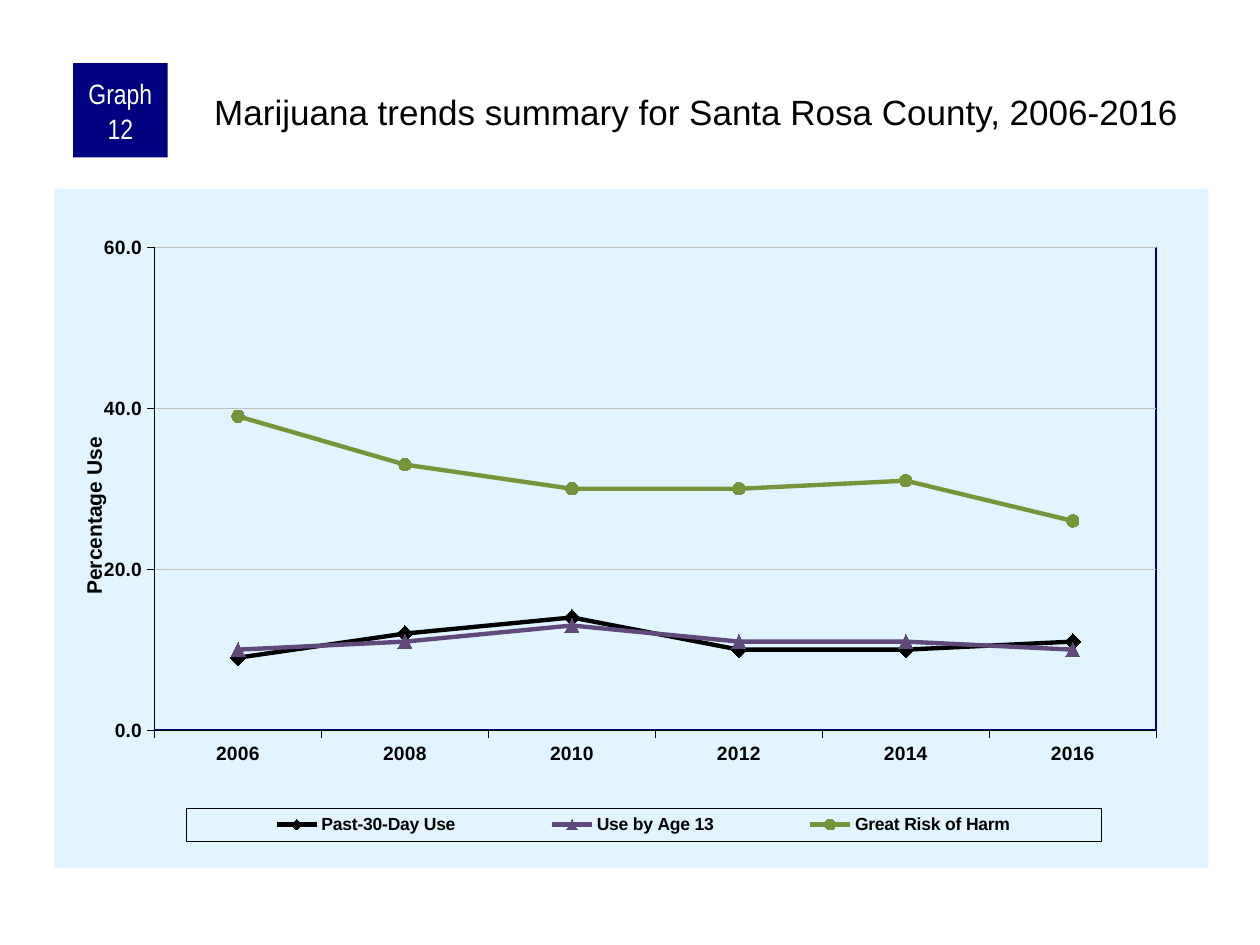
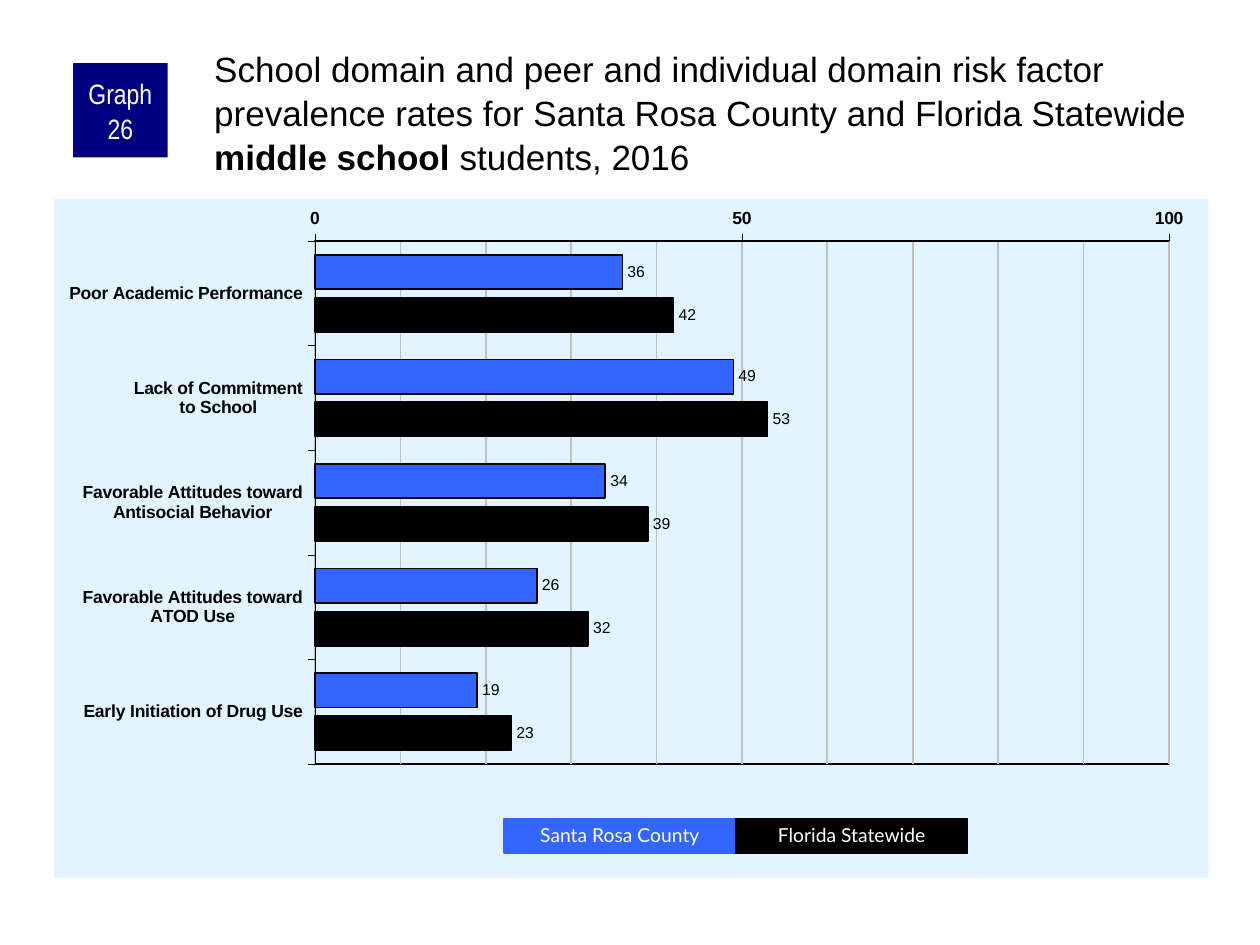
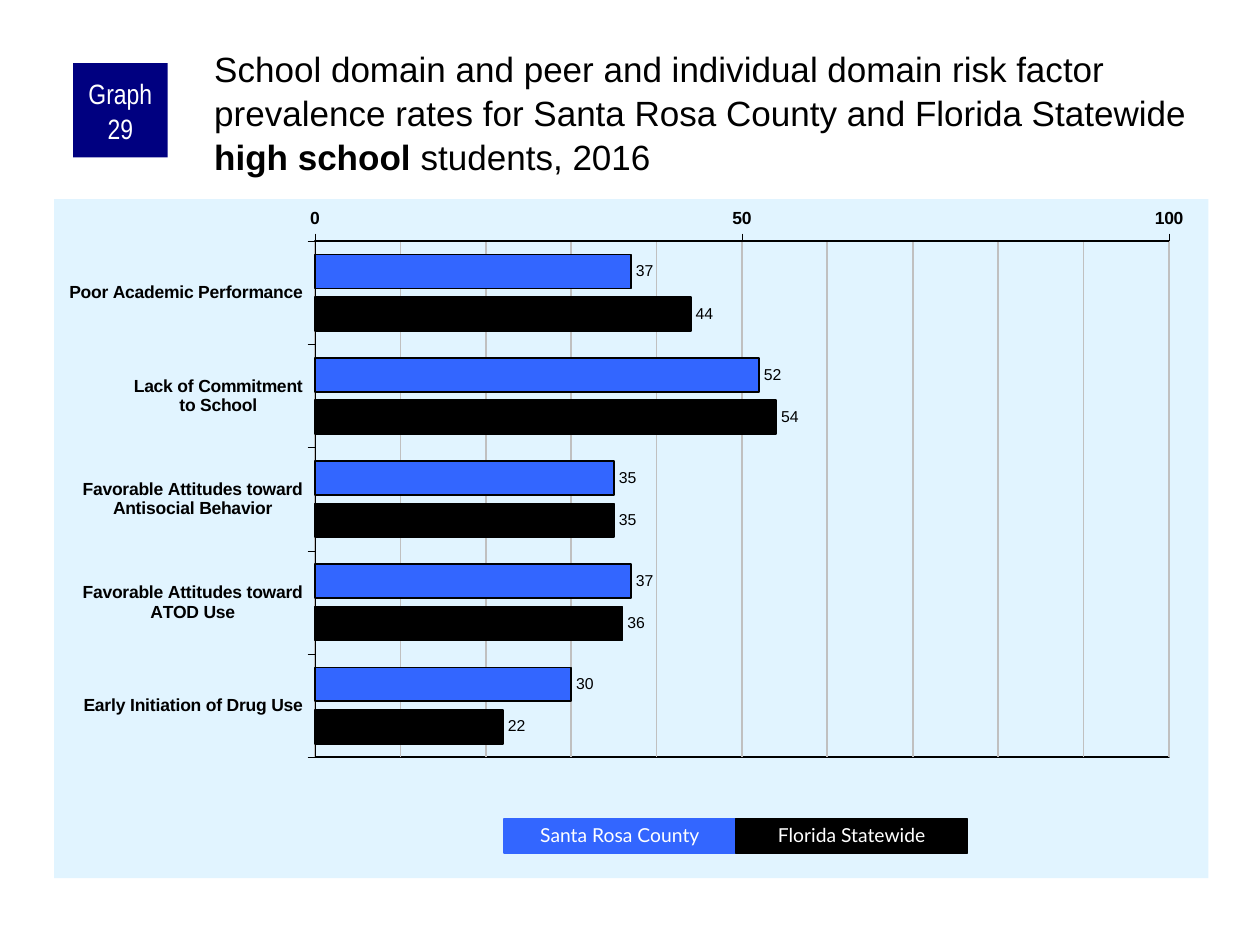
from typing import NamedTuple

from pptx import Presentation
from pptx.chart.data import CategoryChartData
from pptx.dml.color import RGBColor
from pptx.enum.chart import (XL_AXIS_CROSSES, XL_CHART_TYPE, XL_LABEL_POSITION,
                             XL_LEGEND_POSITION, XL_MARKER_STYLE, XL_TICK_MARK)
from pptx.enum.shapes import MSO_SHAPE
from pptx.enum.text import MSO_ANCHOR, MSO_AUTO_SIZE, PP_ALIGN
from pptx.oxml import parse_xml
from pptx.oxml.ns import nsdecls, qn
from pptx.util import Pt

# Scale: 100 px to the inch
PX = 9144

# Colours and fonts
BLACK = RGBColor(0x00, 0x00, 0x00)
WHITE = RGBColor(0xFF, 0xFF, 0xFF)
NAVY = RGBColor(0x00, 0x00, 0x80)
SKY = RGBColor(0xE1, 0xF4, 0xFF)
GREY = RGBColor(0xC0, 0xC0, 0xC0)
BLUE = RGBColor(0x33, 0x66, 0xFF)
PURPLE = RGBColor(0x60, 0x4A, 0x7B)
GREEN = RGBColor(0x77, 0x93, 0x3C)
SANS, NARROW, LATO = "Arial", "Arial Narrow", "Lato"

# Enum members
LINE, BAR = XL_CHART_TYPE.LINE_MARKERS, XL_CHART_TYPE.BAR_CLUSTERED
DIAMOND, TRIANGLE, CIRCLE = (XL_MARKER_STYLE.DIAMOND, XL_MARKER_STYLE.TRIANGLE,
                             XL_MARKER_STYLE.CIRCLE)
OUT, NO_TICK = XL_TICK_MARK.OUTSIDE, XL_TICK_MARK.NONE
FAR_END, BAR_END = XL_AXIS_CROSSES.MAXIMUM, XL_LABEL_POSITION.OUTSIDE_END
RIGHT = XL_LEGEND_POSITION.RIGHT
RECT, FIXED = MSO_SHAPE.RECTANGLE, MSO_AUTO_SIZE.NONE
LEFT, CENTER = PP_ALIGN.LEFT, PP_ALIGN.CENTER
TOP, MIDDLE = MSO_ANCHOR.TOP, MSO_ANCHOR.MIDDLE


class Box(NamedTuple):
    left: int
    top: int
    width: int
    height: int

    def emu(self) -> list[int]:
        return [side * PX for side in self]


class Trend(NamedTuple):
    name: str
    color: RGBColor
    marker: XL_MARKER_STYLE
    size: int
    vals: tuple[int, ...]


class Risk(NamedTuple):
    number: int
    group: str
    county: tuple[int, ...]
    state: tuple[int, ...]
    height: float


# Content
YEARS = ("2006", "2008", "2010", "2012", "2014", "2016")
TRENDS = (
    Trend("Past-30-Day Use", BLACK, DIAMOND, 9, (9, 12, 14, 10, 10, 11)),
    Trend("Use by Age 13", PURPLE, TRIANGLE, 8, (10, 11, 13, 11, 11, 10)),
    Trend("Great Risk of Harm", GREEN, CIRCLE, 7, (39, 33, 30, 30, 31, 26)),
)
FACTORS = ("Poor Academic Performance", "Lack of Commitment\nto School",
           "Favorable Attitudes toward\nAntisocial Behavior",
           "Favorable Attitudes toward\nATOD Use", "Early Initiation of Drug Use")
RISKS = (
    Risk(26, "middle school", (36, 49, 34, 26, 19), (42, 53, 39, 32, 23), 0.77),
    Risk(29, "high school", (37, 52, 35, 37, 30), (44, 54, 35, 36, 22), 0.76),
)
KEYS = (("Santa Rosa County", BLUE), ("Florida Statewide", BLACK))

# Places
BADGE = Box(58, 50, 75, 75)
KEY = Box(400, 650, 184, 27)


def style(font, size: float, name: str = SANS, color: RGBColor = BLACK,
          bold: bool = False) -> None:
    font.size, font.name, font.bold = Pt(size), name, bold
    font.color.rgb = color


def write(shape, *parts: str, size: int, name: str = SANS, color: RGBColor = BLACK,
          align=CENTER, anchor=MIDDLE, inset=(0, 0, 0, 0), gap: float = 1.0) -> None:
    """Write the parts as runs of one paragraph; every second part is bold."""
    frame = shape.text_frame
    frame.word_wrap, frame.auto_size = True, FIXED
    frame.vertical_anchor = anchor
    (frame.margin_left, frame.margin_top,
     frame.margin_right, frame.margin_bottom) = [side * PX for side in inset]
    para = frame.paragraphs[0]
    para.alignment, para.line_spacing = align, gap
    for index, part in enumerate(parts):
        run = para.add_run()
        run.text = part
        style(run.font, size, name, color, bold=index % 2 == 1)


def add_block(slide, box: Box, fill: RGBColor, edge: bool = False):
    block = slide.shapes.add_shape(RECT, *box.emu())
    block.shadow.inherit = False
    block.fill.solid()
    block.fill.fore_color.rgb = fill
    if edge:
        rule(block.line, fill, 0.75)
    else:
        block.line.fill.background()
    return block


def add_page(prs, number: int, top: int, *title: str):
    """Add a slide with its title and numbered badge."""
    slide = prs.slides.add_slide(prs.slide_layouts[5])
    head = slide.shapes.title
    head.left, head.top, head.width, head.height = Box(167, top, 792, 83).emu()
    write(head, *title, size=20, align=LEFT, anchor=TOP, inset=(3, 3, 0, 0), gap=1.05)
    write(add_block(slide, BADGE, NAVY), f"Graph {number}", size=16, name=NARROW,
          color=WHITE, inset=(5, 0, 5, 0), gap=1.05)
    return slide


# Chart parts that need XML
def place(node, index: int, x: float, y: float, w: float = 0, h: float = 0,
          inner: bool = False) -> None:
    for old in node.findall(qn("c:layout")):
        node.remove(old)
    target = '<c:layoutTarget val="inner"/>' if inner else ""
    size = f'<c:w val="{w}"/><c:h val="{h}"/>' if w else ""
    node.insert(index, parse_xml(
        f'<c:layout {nsdecls("c")}><c:manualLayout>{target}'
        f'<c:xMode val="edge"/><c:yMode val="edge"/><c:x val="{x}"/><c:y val="{y}"/>'
        f'{size}</c:manualLayout></c:layout>'))


def paint(fill: RGBColor | None = None, edge: RGBColor | None = None, width: float = 0):
    def solid(color):
        if color is None:
            return "<a:noFill/>"
        return f'<a:solidFill><a:srgbClr val="{color}"/></a:solidFill>'
    return parse_xml(f'<c:spPr {nsdecls("c", "a")}>{solid(fill)}'
                     f'<a:ln w="{Pt(width)}">{solid(edge)}</a:ln></c:spPr>')


def rule(line, color: RGBColor, width: float) -> None:
    line.color.rgb, line.width = color, Pt(width)


def add_graph(slide, kind, top: int, cats, rows, plot, edge: RGBColor, size: float,
              limit: int, step: int, tick: int, form: str, grid: float):
    """Add a chart with its panel, plot area and axes."""
    data = CategoryChartData()
    data.categories = cats
    for name, vals in rows:
        data.add_series(name, vals)
    chart = slide.shapes.add_chart(kind, *Box(43, top, 916, 539).emu(), data).chart
    chart.has_title = chart.has_legend = False
    style(chart.font, size)
    chart.plots[0].vary_by_categories = False
    chart.element.find(qn("c:chart")).addnext(paint(SKY))
    area = chart.element.find(".//" + qn("c:plotArea"))
    place(area, 0, *plot, inner=True)
    area.append(paint(edge=edge, width=1))
    for axis in (chart.category_axis, chart.value_axis):
        axis.major_tick_mark, axis.minor_tick_mark = OUT, NO_TICK
        style(axis.tick_labels.font, tick, bold=True)
        rule(axis.format.line, BLACK, 0.25)
    scale = chart.value_axis
    scale.minimum_scale, scale.maximum_scale, scale.major_unit = 0, limit, step
    scale.has_major_gridlines = True
    rule(scale.major_gridlines.format.line, GREY, grid)
    scale.tick_labels.number_format = form
    scale.tick_labels.number_format_is_linked = False
    return chart


def add_trends(prs) -> None:
    slide = add_page(prs, 12, 67,
                     "Marijuana trends summary for Santa Rosa County, 2006-2016")
    chart = add_graph(slide, LINE, 150, YEARS, [(t.name, t.vals) for t in TRENDS],
                      (0.087, 0.086, 0.868, 0.711), NAVY, 8, 60, 20, 11, "0.0", 0.25)
    for trend, row in zip(TRENDS, chart.plots[0].series):
        row.smooth = False
        rule(row.format.line, trend.color, 2.5)
        mark = row.marker
        mark.style, mark.size = trend.marker, trend.size
        mark.format.fill.solid()
        mark.format.fill.fore_color.rgb = trend.color
        rule(mark.format.line, trend.color, 0.75)
    # Axis title
    run = chart.value_axis.axis_title.text_frame.paragraphs[0].add_run()
    run.text = "Percentage Use"
    style(run.font, 12, bold=True)
    title = chart.element.find(f'.//{qn("c:valAx")}/{qn("c:title")}')
    title.find(".//" + qn("a:bodyPr")).set("rot", "-5400000")
    place(title, 1, 0.02, 0.36)
    # Legend
    chart.has_legend = True
    chart.legend.position = RIGHT
    chart.legend.include_in_layout = False
    style(chart.legend.font, 10, bold=True)
    legend = chart.element.find(".//" + qn("c:legend"))
    place(legend, 1, 0.114, 0.912, 0.793, 0.048)
    legend.find(qn("c:txPr")).addprevious(paint(edge=BLACK, width=0.25))


def add_risks(prs, risk: Risk) -> None:
    slide = add_page(prs, risk.number, 33,
                     "School domain and peer and individual domain risk factor "
                     "prevalence rates for Santa Rosa County and Florida Statewide ",
                     risk.group, " students, 2016")
    rows = [("Series 1", risk.county), ("Series 2", risk.state)]
    chart = add_graph(slide, BAR, 158, FACTORS, rows, (0.226, 0.062, 0.74, risk.height),
                      BLACK, 12, 100, 50, 10, "General", 1)
    plot, scale = chart.plots[0], chart.value_axis
    plot.gap_width, plot.overlap = 80, -25
    chart.category_axis.reverse_order = True
    chart.category_axis.crosses = FAR_END
    scale.has_minor_gridlines, scale.minor_unit = True, 10
    minor = chart.element.find(".//" + qn("c:minorGridlines"))
    minor.append(paint(edge=GREY, width=1))
    for (_, color), row in zip(KEYS, plot.series):
        row.invert_if_negative = False
        row.format.fill.solid()
        row.format.fill.fore_color.rgb = color
        rule(row.format.line, BLACK, 1)
        labels = row.data_labels
        labels.show_value, labels.position = True, BAR_END
        style(labels.font, 9)
    # Colour key
    for index, (text, color) in enumerate(KEYS):
        box = KEY._replace(left=KEY.left + index * KEY.width)
        write(add_block(slide, box, color, edge=True), text, size=11, name=LATO,
              color=WHITE, inset=(10, 5, 10, 5), gap=0.9)


def main() -> None:
    prs = Presentation()
    prs.slide_width, prs.slide_height = 1000 * PX, 750 * PX
    add_trends(prs)
    for risk in RISKS:
        add_risks(prs, risk)
    prs.save("out.pptx")


if __name__ == "__main__":
    main()
